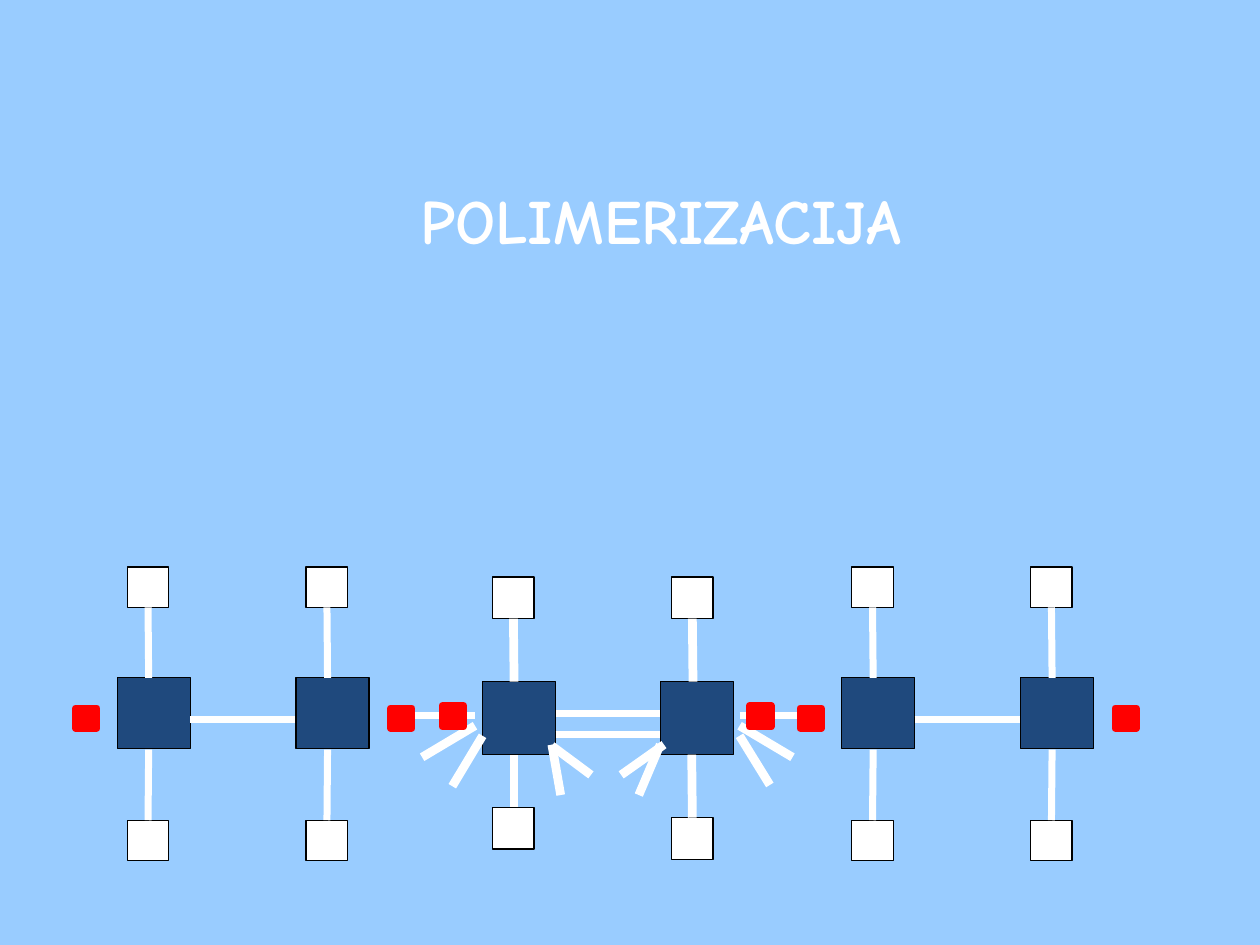
import pptx
import pptx.dml.color
import pptx.enum.shapes
import pptx.enum.text
import pptx.oxml.ns
import pptx.util
from lxml import etree
from pptx.util import Inches

SKY = pptx.dml.color.RGBColor(0x99, 0xCC, 0xFF)
WHITE = pptx.dml.color.RGBColor(0xFF, 0xFF, 0xFF)
BLACK = pptx.dml.color.RGBColor(0, 0, 0)
NAVY = pptx.dml.color.RGBColor(0x1F, 0x49, 0x7D)
RED = pptx.dml.color.RGBColor(0xFF, 0, 0)
TOP, BOTTOM = 0, 2
SPACING = 1.42  # between the two carbons of a unit


class MoleculeSlide:
    font_name = "Comic Neue"

    def __init__(self, deck):
        self.page = deck.slides.add_slide(deck.slide_layouts[5])
        self.page.background.fill.solid()
        self.page.background.fill.fore_color.rgb = SKY

    def title(self, text, left, top, width, height):
        box = self.page.shapes.title
        box.left, box.top = Inches(left), Inches(top)
        box.width, box.height = Inches(width), Inches(height)
        frame = box.text_frame
        frame.text = text
        frame.word_wrap = False
        frame.auto_size = pptx.enum.text.MSO_AUTO_SIZE.NONE
        frame.vertical_anchor = pptx.enum.text.MSO_ANCHOR.TOP
        para = frame.paragraphs[0]
        para.alignment = pptx.enum.text.PP_ALIGN.CENTER
        para.font.name = self.font_name
        para.font.size = pptx.util.Pt(36)
        para.font.bold = True
        para.font.color.rgb = WHITE

    def square(self, left, top, width, height, fill, outline=BLACK, weight=0.75):
        shape = self.page.shapes.add_shape(
            pptx.enum.shapes.MSO_SHAPE.RECTANGLE,
            Inches(left), Inches(top), Inches(width), Inches(height))
        shape.shadow.inherit = False
        shape.fill.solid()
        shape.fill.fore_color.rgb = fill
        shape.line.color.rgb = outline
        shape.line.width = pptx.util.Pt(weight)
        return shape

    def carbon(self, left, top, height):
        return self.square(left, top, 0.58, height, NAVY)

    def hydrogen(self, left, top, height):
        return self.square(left, top, 0.33, height, WHITE)

    def radical(self, left, top, height):
        return self.square(left, top, 0.17, height, RED, RED, 4)

    def line(self, x1, y1, x2, y2, weight, atom=None, side=None):
        """Draw a bond; its start is joined to the atom when one is given."""
        bond = self.page.shapes.add_connector(
            pptx.enum.shapes.MSO_CONNECTOR.STRAIGHT,
            Inches(x1), Inches(y1), Inches(x2), Inches(y2))
        bond.line.color.rgb = WHITE
        bond.line.width = pptx.util.Pt(weight)
        properties = bond._element.spPr
        etree.SubElement(properties, pptx.oxml.ns.qn("a:effectLst"))
        if atom is not None:
            bond.begin_connect(atom, side)

    def opened_unit(self, left):
        """Two carbons with a single bond and a free radical at each end."""
        self.carbon(left, 5.38, 0.56)
        self.line(left + 0.58, 5.71, left + 1.5, 5.71, 4)
        self.carbon(left + SPACING, 5.38, 0.56)
        for x in (left + 0.08, left + 0.08 + SPACING):
            center = x + 0.17
            upper = self.hydrogen(x, 4.5, 0.32)
            lower = self.hydrogen(x, 6.51, 0.32)
            self.line(center, 4.82, center, 5.38, 4, upper, BOTTOM)
            self.line(center, 6.51, center, 5.95, 4, lower, TOP)
        for x in (left - 0.33, left + 2.17):
            self.radical(x, 5.62, 0.16)

    def breaking_unit(self):
        """The middle molecule, whose double bond is breaking."""
        # Bonds that pass behind the atoms
        self.line(4.08, 5.99, 4.08, 6.49, 5)
        self.line(4.41, 5.66, 5.33, 5.66, 4)

        # Atoms and their vertical bonds
        for x in (3.83, 5.24):
            self.carbon(x, 5.41, 0.58)
        self.hydrogen(3.91, 6.41, 0.33)
        lower_right = self.hydrogen(5.33, 6.49, 0.33)
        for x in (3.91, 5.33):
            upper = self.hydrogen(x, 4.58, 0.33)
            self.line(x + 0.17, 4.91, x + 0.17, 5.41, 5, upper, BOTTOM)
        self.line(5.49, 6.49, 5.49, 5.99, 5, lower_right, TOP)

        # Rays around the carbons
        for ray in (
            (3.77, 5.76, 3.35, 6.01), (5.87, 5.76, 6.29, 6.01),
            (4.38, 5.92, 4.69, 6.15), (5.27, 5.91, 4.93, 6.15),
            (4.38, 5.91, 4.45, 6.31), (5.24, 5.91, 5.07, 6.31),
            (3.83, 5.84, 3.59, 6.24), (5.87, 5.84, 6.11, 6.23),
        ):
            self.line(*ray, 5)

        # New side bonds and the two halves of the second bond
        for x1, x2, y in ((5.87, 6.43, 5.68), (3.27, 3.77, 5.68),
                          (4.41, 4.83, 5.83), (4.83, 5.24, 5.83)):
            self.line(x1, y, x2, y, 4)
        for x in (5.95, 3.51):
            self.radical(x, 5.6, 0.17)


def main():
    deck = pptx.Presentation()
    deck.slide_width, deck.slide_height = Inches(10), Inches(7.5)
    slide = MoleculeSlide(deck)
    slide.title("POLIMERIZACIJA", 2.87, 1.39, 4.75, 0.7)
    slide.breaking_unit()
    for left in (6.68, 0.93):
        slide.opened_unit(left)
    deck.save("out.pptx")


if __name__ == "__main__":
    main()
